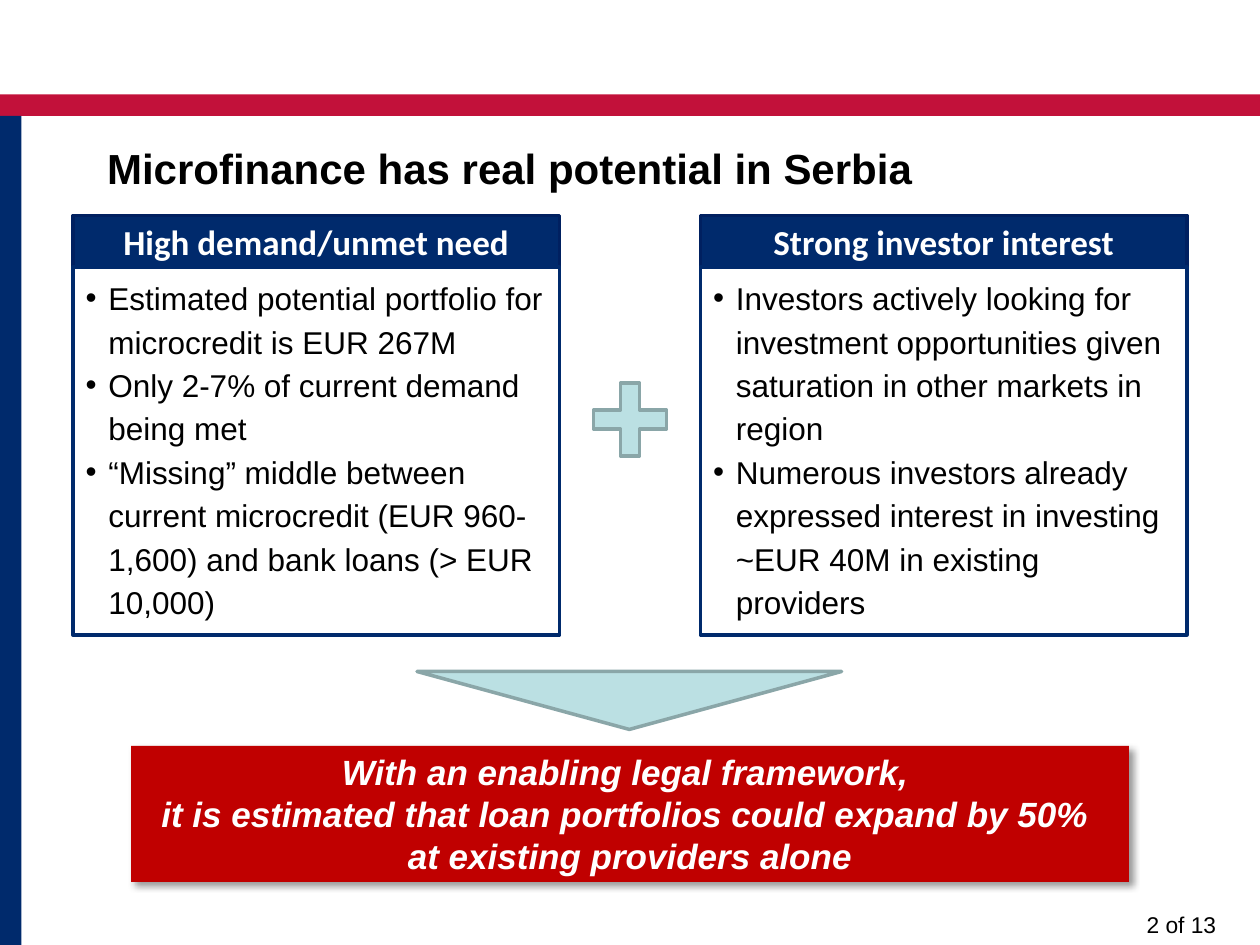
from dataclasses import dataclass

from lxml.etree import SubElement
from pptx import Presentation
from pptx.dml.color import RGBColor
from pptx.enum.shapes import MSO_SHAPE as Shape
from pptx.enum.text import MSO_ANCHOR as Anchor, MSO_AUTO_SIZE as AutoSize, PP_ALIGN as Align
from pptx.oxml.ns import qn
from pptx.util import Inches, Pt


@dataclass(frozen=True)
class Theme:
    """Colours, fonts and type sizes of the deck."""
    crimson: str = "C2113A"
    navy: str = "002A6C"
    navy_edge: str = "002060"
    red: str = "C00000"
    aqua: str = "BBE0E3"
    aqua_edge: str = "8AA6A8"
    white: str = "FFFFFF"
    black: str = "000000"
    text_font: str = "Arial"
    header_font: str = "Calibri"
    title_size: int = 24
    strong_size: int = 20
    body_size: int = 18
    footer_size: int = 13
    line_width: int = 2


class SlideBuilder:
    """Holds the theme and the current page, and draws its elements."""

    def __init__(self, theme, page):
        self.theme = theme
        self.page = page
        self.holders = {holder.placeholder_format.idx: holder for holder in page.placeholders}

    def place(self, box, left, top, width, height):
        """Move and size a box given in inches."""
        box.left, box.top = Inches(left), Inches(top)
        box.width, box.height = Inches(width), Inches(height)

    def paint(self, box, fill, edge=None):
        """Set the fill and the outline of a box."""
        box.fill.solid()
        box.fill.fore_color.rgb = RGBColor.from_string(fill)
        if edge:
            box.line.color.rgb = RGBColor.from_string(edge)
            box.line.width = Pt(self.theme.line_width)
        else:
            box.line.fill.background()

    def set_text(self, box, lines, size, color, font=None, align=Align.LEFT, anchor=Anchor.TOP,
                 bold=False, italic=False, spacing=1.0, bullet=None):
        """Fill a box with one paragraph per line."""
        frame = box.text_frame
        frame.word_wrap = True
        frame.auto_size = AutoSize.NONE
        frame.vertical_anchor = anchor
        frame.text = "\n".join(lines)
        for para in frame.paragraphs:
            para.alignment = align
            para.line_spacing = spacing
            para.space_before = para.space_after = Pt(0)
            if bullet:
                self.add_bullet(para, bullet)
            para.font.name = font or self.theme.text_font
            para.font.size = Pt(size)
            para.font.bold = bold
            para.font.italic = italic
            para.font.color.rgb = RGBColor.from_string(color)

    def add_bullet(self, para, bullet):
        """Give a paragraph a hanging bullet."""
        properties = para._p.get_or_add_pPr()
        properties.set("marL", str(Inches(0.18)))
        properties.set("indent", str(Inches(-0.18)))
        SubElement(properties, qn("a:buFont"), typeface=self.theme.text_font)
        SubElement(properties, qn("a:buChar"), char=bullet)

    def shape(self, kind, left, top, width, height, fill, edge=None):
        """Add a flat preset shape."""
        box = self.page.shapes.add_shape(
            kind, Inches(left), Inches(top), Inches(width), Inches(height))
        box.shadow.inherit = False
        self.paint(box, fill, edge)
        return box

    def title(self, text):
        """Fill the page title."""
        holder = self.page.shapes.title
        self.place(holder, 0.75, 1.08, 8.5, 0.67)
        self.set_text(holder, [text], self.theme.title_size, self.theme.black, bold=True)

    def panel(self, first_index, left, header, points):
        """Fill a header placeholder and the list placeholder below it."""
        theme = self.theme
        head, body = self.holders[first_index], self.holders[first_index + 1]
        self.place(head, left, 1.71, 3.86, 0.42)
        self.paint(head, theme.navy, theme.navy_edge)
        self.set_text(head, [header], theme.strong_size, theme.white, font=theme.header_font,
                      align=Align.CENTER, anchor=Anchor.MIDDLE, bold=True)
        self.place(body, left, 2.12, 3.86, 2.92)
        self.paint(body, theme.white, theme.navy)
        self.set_text(body, points, theme.body_size, theme.black, spacing=1.15, bullet="•")

    def callout(self, lines):
        """Add the conclusion bar with its soft shadow."""
        theme = self.theme
        bar = self.shape(Shape.RECTANGLE, 1.04, 5.92, 7.92, 1.08, theme.red)
        effects = bar._element.spPr.find(qn("a:effectLst"))
        shadow = SubElement(effects, qn("a:outerShdw"), blurRad=str(Pt(4)), dist=str(Pt(3)),
                            dir="2700000", algn="tl", rotWithShape="0")
        tint = SubElement(shadow, qn("a:srgbClr"), val=theme.black)
        SubElement(tint, qn("a:alpha"), val="40000")
        frame = bar.text_frame
        frame.margin_left = frame.margin_right = Inches(0.2)
        frame.margin_top = frame.margin_bottom = Inches(0.2)
        self.set_text(bar, lines, theme.strong_size, theme.white, align=Align.CENTER,
                      anchor=Anchor.MIDDLE, bold=True, italic=True)

    def plus(self):
        """Add the plus sign between the panels."""
        sign = self.shape(Shape.CROSS, 4.71, 3.04, 0.58, 0.58,
                          self.theme.aqua, self.theme.aqua_edge)
        sign.adjustments[0] = 0.37

    def down_pointer(self):
        """Add the flat triangle that points at the conclusion."""
        pointer = self.shape(Shape.ISOSCELES_TRIANGLE, 3.31, 5.33, 3.37, 0.46,
                             self.theme.aqua, self.theme.aqua_edge)
        pointer._element.spPr.xfrm.set("flipV", "1")

    def page_number(self, text):
        """Add the page number at the lower right."""
        box = self.page.shapes.add_textbox(Inches(7.42), Inches(7.18), Inches(2.33), Inches(0.4))
        self.set_text(box, [text], self.theme.footer_size, self.theme.black, align=Align.RIGHT)


def main():
    """Build the deck and save it."""
    deck = Presentation()
    deck.slide_width, deck.slide_height = Inches(10), Inches(7.5)
    theme = Theme()
    comparison = deck.slide_layouts.get_by_name("Comparison")
    builder = SlideBuilder(theme, deck.slides.add_slide(comparison))

    builder.shape(Shape.RECTANGLE, 0, 0.75, 10, 0.17, theme.crimson)
    builder.shape(Shape.RECTANGLE, 0, 0.92, 0.17, 6.58, theme.navy)
    builder.title("Microfinance has real potential in Serbia")
    builder.panel(1, 0.58, "High demand/unmet need", [
        "Estimated potential portfolio for microcredit is EUR 267M",
        "Only 2-7% of current demand being met",
        "“Missing” middle between current microcredit (EUR 960-1,600) "
        "and bank loans (> EUR 10,000)",
    ])
    builder.panel(3, 5.56, "Strong investor interest", [
        "Investors actively looking for investment opportunities given "
        "saturation in other markets in region",
        "Numerous investors already expressed interest in investing "
        "~EUR 40M in existing providers",
    ])
    builder.callout([
        "With an enabling legal framework, ",
        "it is estimated that loan portfolios could expand by 50% ",
        "at existing providers alone",
    ])
    builder.plus()
    builder.down_pointer()
    builder.page_number("2 of 13")
    deck.save("out.pptx")


if __name__ == "__main__":
    main()
